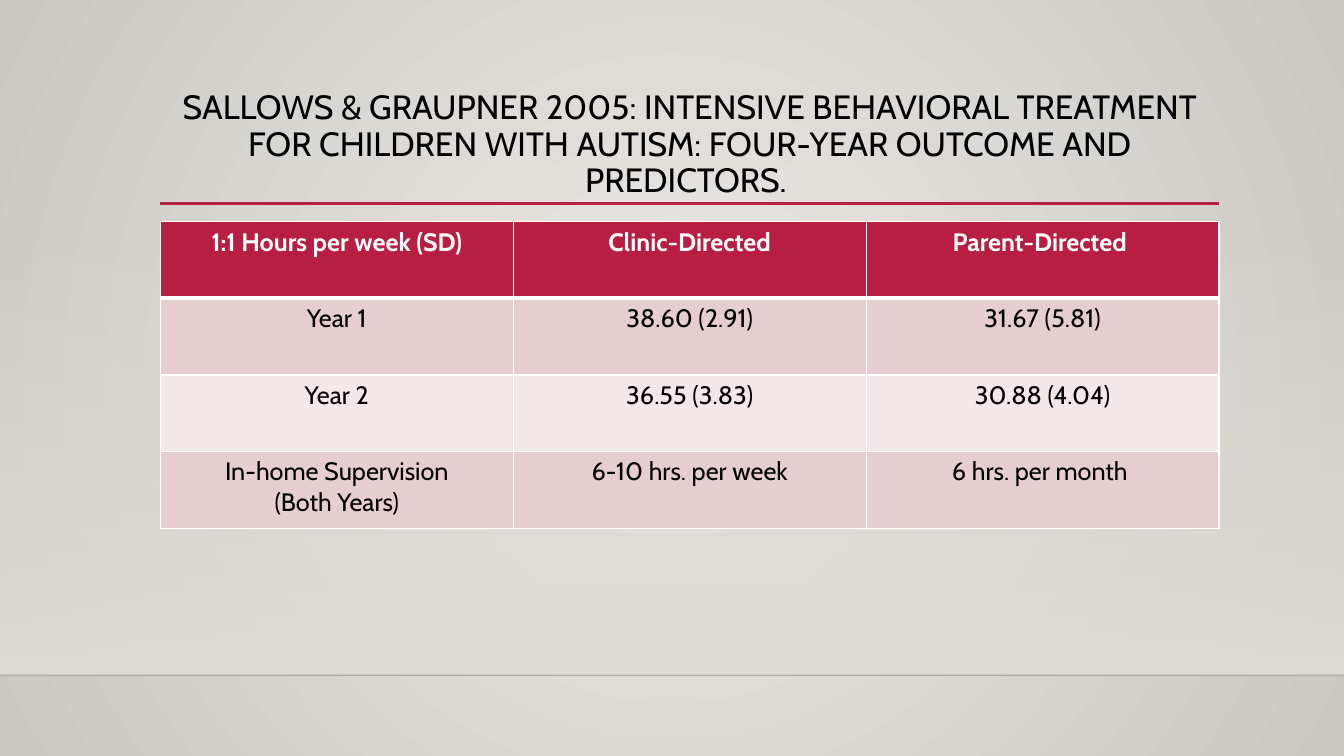
from pptx import Presentation
from pptx.dml.color import RGBColor
from pptx.enum.shapes import MSO_CONNECTOR, MSO_SHAPE
from pptx.enum.text import MSO_ANCHOR, MSO_AUTO_SIZE, PP_ALIGN
from pptx.oxml.ns import qn
from pptx.util import Inches, Pt
from lxml.etree import SubElement

WIDE, HIGH = 13.33, 7.5
LEFT, SPAN = 1.59, 10.5
RED, WHITE, BLACK = "B71E42", "FFFFFF", "000000"
BANDS = ["E6CDCF", "F3E8E9"]
TITLE = ("SALLOWS & GRAUPNER 2005: INTENSIVE BEHAVIORAL TREATMENT FOR "
         "CHILDREN WITH AUTISM: FOUR-YEAR OUTCOME AND PREDICTORS. ")
ROWS = [
    ["1:1 Hours per week (SD)", "Clinic-Directed", "Parent-Directed "],
    ["Year 1", "38.60 (2.91)", "31.67 (5.81)"],
    ["Year 2", "36.55 (3.83)", "30.88 (4.04)"],
    ["In-home Supervision\n(Both Years)", "6-10 hrs. per week", "6 hrs. per month "],
]


def tint(code):
    return RGBColor.from_string(code)


def style(para, size, color, bold=False):
    para.alignment = PP_ALIGN.CENTER
    looks = {"name": "Cabin", "size": Pt(size), "bold": bold}
    for run in para.runs:
        for key, value in looks.items():
            setattr(run.font, key, value)
        run.font.color.rgb = tint(color)


def blend(fill, first, last):
    fill.gradient()
    for stop, code, place in zip(fill.gradient_stops, (first, last), (0, 1)):
        stop.color.rgb = tint(code)
        stop.position = place


def fade(node, percent):
    SubElement(node, qn("a:alpha"), val=str(percent * 1000))


def rule(slide, left, top, width, color, weight):
    line = slide.shapes.add_connector(
        MSO_CONNECTOR.STRAIGHT, Inches(left), Inches(top),
        Inches(left + width), Inches(top))
    line.line.color.rgb = tint(color)
    line.line.width = Pt(weight)
    SubElement(line.element.spPr, qn("a:effectLst"))
    return line


def backdrop(slide, top, height):
    # Radial background
    blend(slide.background.fill, "ECEAE7", "CAC7C1")
    grad = next(slide.element.iter(qn("a:gradFill")))
    grad.remove(grad.find(qn("a:lin")))
    radial = SubElement(grad, qn("a:path"), {"path": "circle"})
    SubElement(radial, qn("a:fillToRect"), dict.fromkeys("ltrb", "50000"))

    # Wall that fades in downward
    wall = slide.shapes.add_shape(
        MSO_SHAPE.RECTANGLE, 0, Inches(top), Inches(WIDE), Inches(height))
    wall.shadow.inherit = False
    wall.line.fill.background()
    blend(wall.fill, "DFDBD5", "DFDBD5")
    wall.fill.gradient_angle = 270
    fade(next(wall.element.spPr.iter(qn("a:srgbClr"))), 0)

    # Floor edge
    edge = rule(slide, 0, top + height, WIDE, "000001", 1)
    fade(next(edge.element.spPr.iter(qn("a:srgbClr"))), 20)


def heading(slide, left, top, width, height):
    rule(slide, left, top + height - 0.01, width, RED, 2.5)
    title = slide.shapes.title
    box = {"left": left, "top": top, "width": width, "height": height}
    for key, value in box.items():
        setattr(title, key, Inches(value))
    frame = title.text_frame
    frame.text = TITLE
    frame.word_wrap = True
    frame.auto_size = MSO_AUTO_SIZE.NONE
    frame.vertical_anchor = MSO_ANCHOR.BOTTOM
    para = frame.paragraphs[0]
    para.line_spacing = 0.9
    style(para, 24, BLACK)
    # Bring the title in front of the rules
    slide.shapes.element.append(title.element)


def border(cell, weights):
    props = cell._tc.get_or_add_tcPr()
    for spot, (side, weight) in enumerate(weights.items()):
        line = props.makeelement(qn(f"a:ln{side}"), w=str(Pt(weight)))
        fill = SubElement(line, qn("a:solidFill"))
        SubElement(fill, qn("a:srgbClr"), val=WHITE)
        props.insert(spot, line)


def hours(slide, left, top, width, height):
    count = len(ROWS)
    table = slide.shapes.add_table(
        count, len(ROWS[0]), Inches(left), Inches(top),
        Inches(width), Inches(height)).table
    for r, row in enumerate(ROWS):
        head = r == 0
        for c, text in enumerate(row):
            cell = table.cell(r, c)
            cell.text = text
            cell.fill.solid()
            cell.fill.fore_color.rgb = tint(RED if head else BANDS[(r - 1) % 2])
            border(cell, {"L": 1, "R": 1, "T": 3 if r == 1 else 1,
                          "B": 3 if head else 1})
            for para in cell.text_frame.paragraphs:
                style(para, 18, WHITE if head else BLACK, head)


def main():
    deck = Presentation()
    deck.slide_width, deck.slide_height = Inches(WIDE), Inches(HIGH)
    slide = deck.slides.add_slide(deck.slide_layouts[5])
    backdrop(slide, 2.21, 4.49)
    heading(slide, LEFT, 0.88, SPAN, 1.15)
    hours(slide, LEFT, 2.2, SPAN, 3.04)
    deck.save("out.pptx")


if __name__ == "__main__":
    main()
